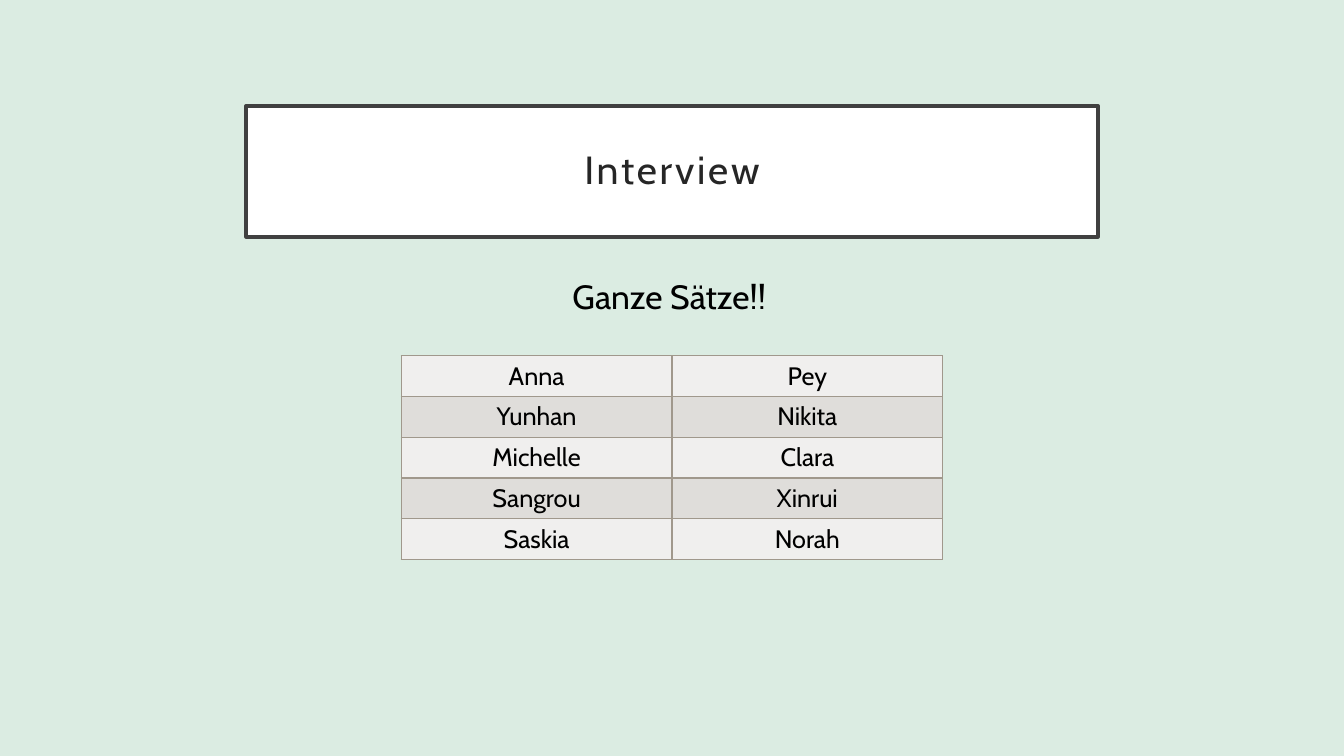
import pptx
import pptx.dml.color
import pptx.enum.shapes
import pptx.enum.text
import pptx.util
from lxml import etree
from pptx.oxml.ns import qn

Inches = pptx.util.Inches
Pt = pptx.util.Pt
ALIGN = pptx.enum.text.PP_ALIGN
ANCHOR = pptx.enum.text.MSO_ANCHOR

FONT = "Cabin"
ROW_FILLS = ["F0EFEE", "DFDDDA"]
BORDER_COLOUR = "A0988C"
PARTNERS = [
    ("Anna", "Pey"),
    ("Yunhan", "Nikita"),
    ("Michelle", "Clara"),
    ("Sangrou", "Xinrui"),
    ("Saskia", "Norah"),
]


def colour(value):
    return pptx.dml.color.RGBColor.from_string(value)


def write_text(frame, text, size, font_colour="000000", align=ALIGN.LEFT,
               line_spacing=None, letter_spacing=None):
    para = frame.paragraphs[0]
    para.alignment = align
    if line_spacing:
        para.line_spacing = line_spacing
    span = para.add_run()
    span.text = text
    span.font.name = FONT
    span.font.size = Pt(size)
    span.font.color.rgb = colour(font_colour)
    if letter_spacing:
        # Letter spacing is stored in hundredths of a point
        span.font._element.set("spc", str(letter_spacing * 100))


def add_title_box(page, text, left, top, width, height):
    box = page.shapes.add_shape(
        pptx.enum.shapes.MSO_SHAPE.RECTANGLE,
        Inches(left), Inches(top), Inches(width), Inches(height))
    box.shadow.inherit = False
    box.fill.solid()
    box.fill.fore_color.rgb = colour("FFFFFF")
    box.line.color.rgb = colour("404040")
    box.line.width = Pt(2.5)
    frame = box.text_frame
    frame.word_wrap = True
    frame.vertical_anchor = ANCHOR.MIDDLE
    frame.margin_left = frame.margin_right = Inches(0.2)
    frame.margin_top = frame.margin_bottom = Inches(0.2)
    write_text(frame, text, 28, font_colour="262626", align=ALIGN.CENTER,
               line_spacing=0.9, letter_spacing=2)


def add_label(page, text, left, top, width, height):
    box = page.shapes.add_textbox(
        Inches(left), Inches(top), Inches(width), Inches(height))
    frame = box.text_frame
    frame.word_wrap = True
    frame.auto_size = pptx.enum.text.MSO_AUTO_SIZE.SHAPE_TO_FIT_TEXT
    write_text(frame, text, 24)


def add_borders(cell):
    properties = cell._tc.get_or_add_tcPr()
    for side in ("a:lnL", "a:lnR", "a:lnT", "a:lnB"):
        line = etree.SubElement(properties, qn(side), w=str(Pt(1)))
        fill = etree.SubElement(line, qn("a:solidFill"))
        etree.SubElement(fill, qn("a:srgbClr"), val=BORDER_COLOUR)


def add_name_table(page, names, left, top, width, height):
    table = page.shapes.add_table(
        len(names), len(names[0]),
        Inches(left), Inches(top), Inches(width), Inches(height)).table
    table.first_row = False
    for row, pair in enumerate(names):
        for column, name in enumerate(pair):
            cell = table.cell(row, column)
            add_borders(cell)
            cell.fill.solid()
            cell.fill.fore_color.rgb = colour(ROW_FILLS[row % 2])
            write_text(cell.text_frame, name, 18, align=ALIGN.CENTER)


def main():
    deck = pptx.Presentation()
    deck.slide_width = Inches(13.33)
    deck.slide_height = Inches(7.5)
    page = deck.slides.add_slide(deck.slide_layouts[6])

    # Background
    page.background.fill.solid()
    page.background.fill.fore_color.rgb = colour("DBECE2")

    # Title and instruction
    add_title_box(page, "Interview", 2.44, 1.05, 8.45, 1.3)
    add_label(page, "Ganze Sätze!!", 5.58, 2.69, 2.17, 0.5)

    # Interview partners
    add_name_table(page, PARTNERS, 3.98, 3.53, 5.37, 2.02)

    deck.save("out.pptx")


if __name__ == "__main__":
    main()
